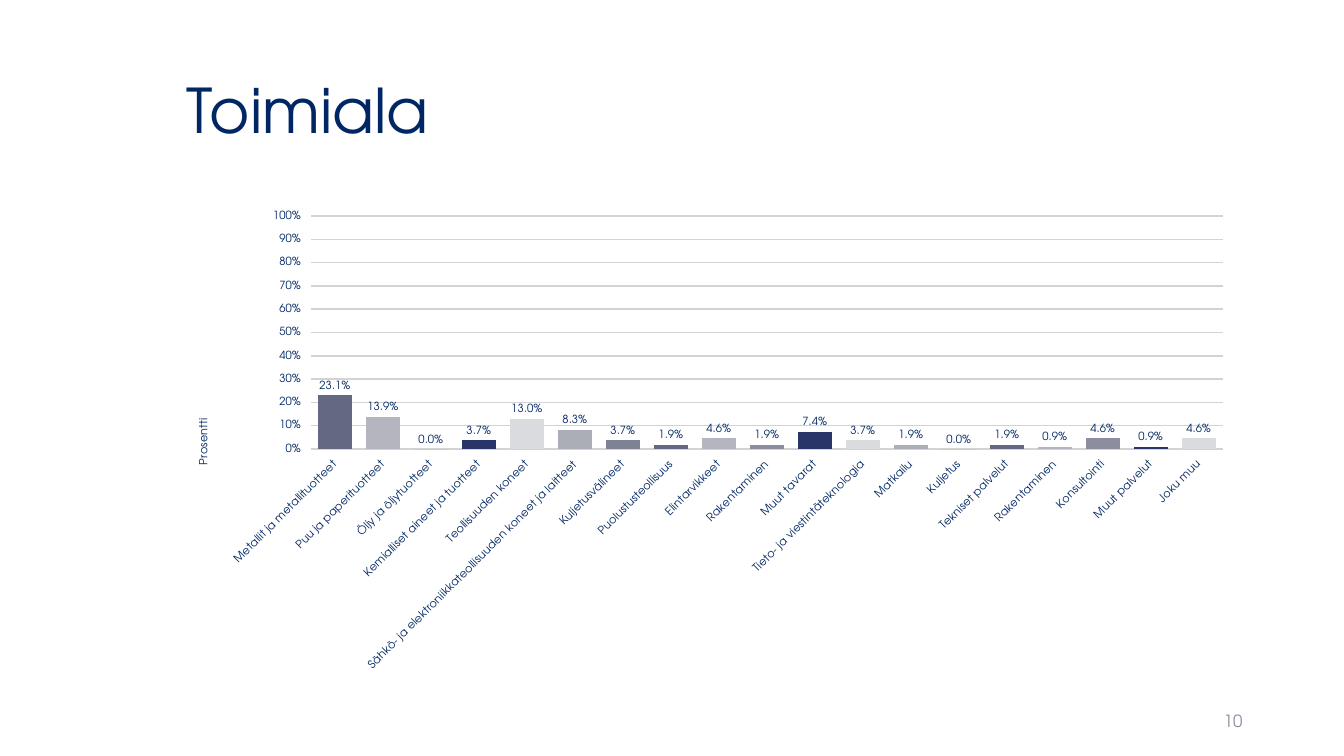
from dataclasses import dataclass

from lxml import etree
from pptx import Presentation
from pptx.chart import data as chart_data
from pptx.dml.color import RGBColor
from pptx.enum import chart as ch
from pptx.enum import text
from pptx.oxml import ns
from pptx.util import Inches, Pt

FONT = "TeX Gyre Adventor"
COLOURS = {"navy": "002663", "grid": "D3D3D3", "page": "8C8E9F"}
BAR_CYCLE = ["646883", "B4B5BF", "8C8E9F", "293568", "DADBDF", "ABADB7", "7F8195"]


@dataclass
class Industry:
    name: str
    share: float


INDUSTRIES = [
    Industry("Metallit ja metallituotteet", 0.231),
    Industry("Puu ja paperituotteet", 0.139),
    Industry("Öljy ja öljytuotteet", 0),
    Industry("Kemialliset aineet ja tuotteet", 0.037),
    Industry("Teollisuuden koneet", 0.13),
    Industry("Sähkö- ja elektroniikkateollisuuden koneet ja laitteet", 0.083),
    Industry("Kuljetusvälineet", 0.037),
    Industry("Puolustusteollisuus", 0.019),
    Industry("Elintarvikkeet", 0.046),
    Industry("Rakentaminen", 0.019),
    Industry("Muut tavarat", 0.074),
    Industry("Tieto- ja viestintäteknologia", 0.037),
    Industry("Matkailu", 0.019),
    Industry("Kuljetus", 0),
    Industry("Tekniset palvelut", 0.019),
    Industry("Rakentaminen", 0.009),
    Industry("Konsultointi", 0.046),
    Industry("Muut palvelut", 0.009),
    Industry("Joku muu", 0.046),
]


def style_font(font, size: float, colour: str = "navy") -> None:
    font.name = FONT
    font.size = Pt(size)
    font.bold = False
    font.color.rgb = RGBColor.from_string(COLOURS[colour])


def write(frame, words: str, size: float, colour: str = "navy"):
    frame.word_wrap = True
    frame.vertical_anchor = text.MSO_ANCHOR.MIDDLE
    paragraph = frame.paragraphs[0]
    run = paragraph.add_run()
    run.text = words
    style_font(run.font, size, colour)
    return paragraph


def place(element, index: int, **fractions) -> None:
    """Give a chart part a manual layout, in fractions of the chart."""
    layout = element.find(ns.qn("c:layout"))
    if layout is None:
        layout = etree.Element(ns.qn("c:layout"))
        element.insert(index, layout)
    manual = etree.SubElement(layout, ns.qn("c:manualLayout"))
    if "w" in fractions:
        etree.SubElement(manual, ns.qn("c:layoutTarget")).set("val", "inner")
    for side in ("x", "y"):
        etree.SubElement(manual, ns.qn(f"c:{side}Mode")).set("val", "edge")
    for key, value in fractions.items():
        etree.SubElement(manual, ns.qn(f"c:{key}")).set("val", str(value))


def add_industry_chart(slide) -> None:
    shares = chart_data.CategoryChartData(number_format="0.0%")
    shares.categories = [industry.name for industry in INDUSTRIES]
    shares.add_series("Series 1", [industry.share for industry in INDUSTRIES])
    chart = slide.shapes.add_chart(
        ch.XL_CHART_TYPE.COLUMN_CLUSTERED,
        Inches(1.75), Inches(2), Inches(10.59), Inches(4.76), shares).chart
    chart.has_legend = False
    chart.has_title = False
    style_font(chart.font, 18)
    place(chart.plots[0]._element.getparent(), 0, x=0.126, y=0.03, w=0.854, h=0.486)

    # Bars and their labels
    plot = chart.plots[0]
    plot.gap_width = 40
    plot.overlap = -2
    plot.vary_by_categories = False
    for index in range(len(INDUSTRIES)):
        fill = plot.series[0].points[index].format.fill
        fill.solid()
        fill.fore_color.rgb = RGBColor.from_string(BAR_CYCLE[index % len(BAR_CYCLE)])
    plot.has_data_labels = True
    labels = plot.data_labels
    labels.show_value = True
    labels.number_format = "0.0%"
    labels.number_format_is_linked = False
    labels.position = ch.XL_LABEL_POSITION.OUTSIDE_END
    style_font(labels.font, 8)

    # Axes
    industries, percent = chart.category_axis, chart.value_axis
    for axis in (industries, percent):
        axis.format.line.fill.background()
        style_font(axis.tick_labels.font, 8)
    slant = industries._element.find(ns.qn("c:txPr")).find(ns.qn("a:bodyPr"))
    slant.set("rot", "-2700000")
    slant.set("vert", "horz")
    percent.minimum_scale, percent.maximum_scale, percent.major_unit = 0, 1, 0.1
    percent.tick_labels.number_format = "0%"
    percent.tick_labels.number_format_is_linked = False
    grid = percent.major_gridlines.format.line
    grid.color.rgb = RGBColor.from_string(COLOURS["grid"])
    grid.width = Pt(1)

    # Value axis title
    heading = percent.axis_title
    write(heading.text_frame, "Prosentti", 8)
    turn = heading._element.find(".//" + ns.qn("a:bodyPr"))
    turn.set("rot", "-5400000")
    turn.set("vert", "horz")
    place(heading._element, 1, x=0.018, y=0.447)


def main() -> None:
    deck = Presentation()
    deck.slide_width, deck.slide_height = Inches(13.33), Inches(7.5)
    slide = deck.slides.add_slide(deck.slide_layouts[5])

    # Title
    title = slide.shapes.title
    title.left, title.top = Inches(1.75), Inches(0.4)
    title.width, title.height = Inches(10.59), Inches(1.45)
    heading = write(title.text_frame, "Toimiala", 44)
    heading.alignment = text.PP_ALIGN.LEFT
    heading.line_spacing = 0.9

    add_industry_chart(slide)

    # Page number
    page = slide.shapes.add_textbox(Inches(9.42), Inches(6.95), Inches(3), Inches(0.4))
    number = write(page.text_frame, "10", 12, "page")
    number.alignment = text.PP_ALIGN.RIGHT

    deck.save("out.pptx")


if __name__ == "__main__":
    main()
